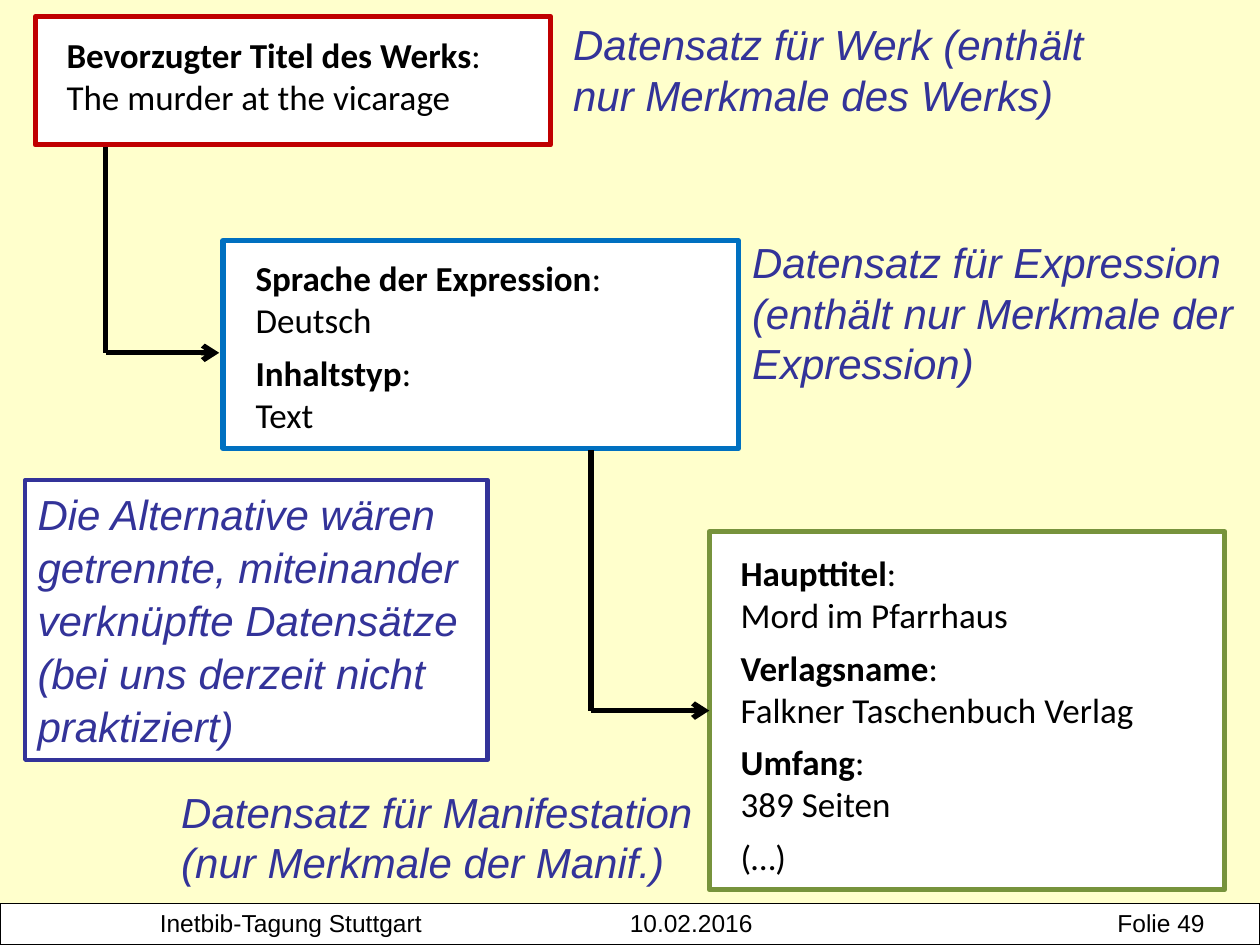
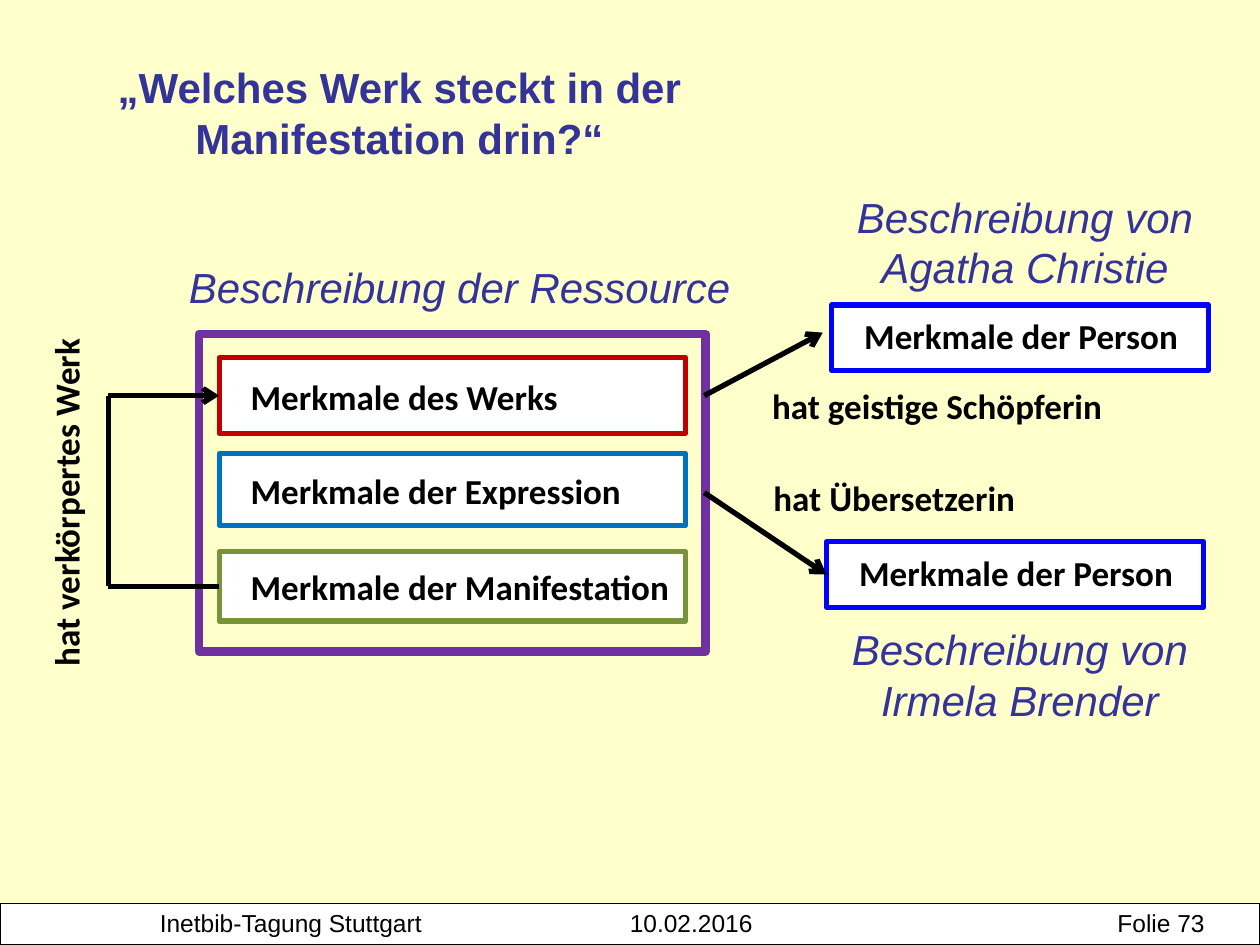
from dataclasses import dataclass
from typing import Any, NamedTuple, Optional

from lxml import etree
from pptx import Presentation
from pptx import slide as sld
from pptx import util as u
from pptx.dml import color as clr
from pptx.enum import shapes, text as txt
from pptx.oxml import ns
from pptx.shapes import autoshape as auto
from pptx.text import text as body


@dataclass(frozen=True)
class Theme:
    page: str = "FFFFCC"
    white: str = "FFFFFF"
    ink: str = "000000"
    navy: str = "333399"
    work: str = "C00000"
    expr: str = "0070C0"
    manif: str = "77933C"
    person: str = "0000FF"
    frame: str = "7030A0"
    head: str = "Arial"
    data: str = "Calibri"
    note_size: int = 24
    data_size: int = 20
    foot_size: int = 14
    thin: float = 0.75
    rule: float = 3
    thick: float = 5
    after: int = 6


T = Theme()


def rgb(hue: str) -> clr.RGBColor:
    return clr.RGBColor.from_string(hue)


def style(face: str, size: int, hue: str, **more: bool) -> dict[str, Any]:
    return {"name": face, "size": u.Pt(size), "hue": hue, **more}


NOTE = style(T.head, T.note_size, T.navy, italic=True)
TITLE = style(T.head, T.note_size, T.navy, bold=True)
DATA = style(T.data, T.data_size, T.ink)
LABEL = {**DATA, "bold": True}
FOOT = style(T.head, T.foot_size, T.ink)


class Area(NamedTuple):
    left: float
    top: float
    width: float
    height: float

    def emu(self) -> list[u.Length]:
        return [u.Inches(side) for side in self]

    def mid(self) -> float:
        return self.top + self.height / 2


class Point(NamedTuple):
    x: float
    y: float


class Run(NamedTuple):
    text: str
    form: dict[str, Any]


@dataclass
class Para:
    runs: list[Run]
    form: dict[str, Any]


@dataclass
class Card:
    """A framed box with text laid over it."""
    box: Area
    hue: str
    area: Area
    paras: list[Para]


def apply(target: Any, form: dict[str, Any]) -> None:
    for key, value in form.items():
        if key == "hue":
            target.color.rgb = rgb(value)
        else:
            setattr(target, key, value)


def note(text: str, form: dict[str, Any] = NOTE, **more: Any) -> list[Para]:
    return [Para([Run(text, form)], more)]


def label(text: str) -> list[Para]:
    return note(text, LABEL)


def fields(*pairs: tuple[str, str]) -> list[Para]:
    """Bold field names, each followed by its value on a new line."""
    paras = []
    for name, value in pairs:
        paras.append(Para([Run(name, LABEL), Run(":", DATA)], {}))
        paras += note(value, DATA, space_after=u.Pt(T.after))
    return paras


def fill(frame: body.TextFrame, paras: list[Para], fit: bool = True) -> None:
    size = txt.MSO_AUTO_SIZE
    apply(frame, {"word_wrap": True,
                  "vertical_anchor": txt.MSO_ANCHOR.TOP,
                  "auto_size": size.SHAPE_TO_FIT_TEXT if fit else size.NONE})
    for num, item in enumerate(paras):
        para = frame.add_paragraph() if num else frame.paragraphs[0]
        apply(para, {"alignment": txt.PP_ALIGN.LEFT, **item.form})
        for part in item.runs:
            for row, line in enumerate(part.text.split("\n")):
                if row:
                    para.add_line_break()
                run = para.add_run()
                run.text = line
                apply(run.font, part.form)


def write(slide: sld.Slide, area: Area, paras: list[Para], turn: float = 0) -> auto.Shape:
    shape = slide.shapes.add_textbox(*area.emu())
    shape.rotation = turn
    fill(shape.text_frame, paras)
    return shape


def frame(slide: sld.Slide, area: Area, hue: str, width: float = T.rule,
          solid: bool = True) -> auto.Shape:
    shape = slide.shapes.add_shape(shapes.MSO_SHAPE.RECTANGLE, *area.emu())
    shape.shadow.inherit = False
    if solid:
        shape.fill.solid()
        shape.fill.fore_color.rgb = rgb(T.white)
    else:
        shape.fill.background()
    apply(shape.line, {"hue": hue, "width": u.Pt(width)})
    return shape


def place(slide: sld.Slide, card: Card) -> auto.Shape:
    shape = frame(slide, card.box, card.hue)
    write(slide, card.area, card.paras)
    return shape


def link(slide: sld.Slide, start: Point, end: Point, arrow: bool = False,
         goal: Optional[auto.Shape] = None) -> None:
    """Draw a line; a goal shape is joined at the middle of its left side."""
    ends = [u.Inches(value) for value in (*start, *end)]
    line = slide.shapes.add_connector(shapes.MSO_CONNECTOR.STRAIGHT, *ends)
    apply(line.line, {"hue": T.ink, "width": u.Pt(T.rule)})
    if goal is not None:
        line.end_connect(goal, 1)
    if arrow:
        etree.SubElement(line.line._get_or_add_ln(), ns.qn("a:tailEnd"), type="arrow")
    etree.SubElement(line._element.spPr, ns.qn("a:effectLst"))


def footer(slide: sld.Slide, page: int) -> None:
    frame(slide, Area(0, 7.17, 10, 0.33), T.ink, T.thin)
    cells = ("Inetbib-Tagung Stuttgart", "10.02.2016", f"Folie {page}")
    shape = write(slide, Area(1.17, 7.16, 8.67, 0.34), note("\t".join(cells), FOOT))
    props = shape.text_frame.paragraphs[0]._p.get_or_add_pPr()
    tabs = etree.SubElement(props, ns.qn("a:tabLst"))
    for stop in (3.73, 7.6):
        etree.SubElement(tabs, ns.qn("a:tab"), pos=str(u.Inches(stop)), algn="l")


def records(slide: sld.Slide) -> None:
    """Separate linked records for work, expression and manifestation."""
    work = Card(Area(0.28, 0.13, 4.09, 1.02), T.work, Area(0.43, 0.22, 3.7, 0.77),
                fields(("Bevorzugter Titel des Werks", "The murder at the vicarage")))
    expr = Card(Area(1.77, 1.91, 4.09, 1.65), T.expr, Area(1.93, 1.99, 3.7, 1.53),
                fields(("Sprache der Expression", "Deutsch"), ("Inhaltstyp", "Text")))
    manif = Card(Area(5.63, 4.22, 4.09, 2.84), T.manif, Area(5.78, 4.33, 3.95, 3.05),
                 fields(("Haupttitel", "Mord im Pfarrhaus"),
                        ("Verlagsname", "Falkner Taschenbuch Verlag"),
                        ("Umfang", "389 Seiten")) + note("(…)", DATA))
    goal = [place(slide, card) for card in (work, expr, manif)][-1]

    bend = Point(0.84, 2.8)
    link(slide, Point(bend.x, 1.17), bend)
    link(slide, bend, Point(1.74, bend.y), arrow=True)
    bend = Point(4.69, manif.box.mid())
    link(slide, Point(bend.x, 3.57), bend)
    link(slide, bend, Point(manif.box.left, bend.y), arrow=True, goal=goal)

    for area, text in (
        (Area(4.45, 0.1, 4.69, 0.91), "Datensatz für Werk (enthält nur Merkmale des Werks)"),
        (Area(5.87, 1.83, 4.02, 1.31),
         "Datensatz für Expression\n(enthält nur Merkmale der Expression)"),
        (Area(1.34, 6.19, 4.33, 0.91),
         "Datensatz für Manifestation\n(nur Merkmale der Manif.)"),
    ):
        write(slide, area, note(text))
    other = frame(slide, Area(0.2, 3.81, 3.67, 2.22), T.navy, 2.5)
    fill(other.text_frame, note(
        "Die Alternative wären\ngetrennte, miteinander verknüpfte Datensätze "
        "(bei uns derzeit nicht praktiziert)", line_spacing=1.05))


def resource(slide: sld.Slide) -> None:
    """One combined description with links to persons."""
    title = slide.shapes.title
    spots = ("left", "top", "width", "height")
    apply(title, dict(zip(spots, Area(0.76, 0.44, 4.82, 1.31).emu())))
    center = {"alignment": txt.PP_ALIGN.CENTER}
    fill(title.text_frame, note("„Welches Werk steckt in der Manifestation drin?“",
                                TITLE, **center), fit=False)

    frame(slide, Area(1.58, 2.65, 4.02, 2.52), T.frame, T.thick, solid=False)
    write(slide, Area(1.4, 2.03, 4.82, 0.5), note("Beschreibung der Ressource"))
    levels = []
    for top, height, drop, hue, name in (
        (2.84, 0.6, 0.09, T.work, "des Werks"),
        (3.6, 0.57, 0.08, T.expr, "der Expression"),
        (4.38, 0.55, 0.06, T.manif, "der Manifestation"),
    ):
        card = Card(Area(1.74, top, 3.7, height), hue,
                    Area(1.89, top + drop, 3.95, 0.44), label(f"Merkmale {name}"))
        levels.append((card.box, place(slide, card)))

    people = []
    for left, top, rise, name in ((6.6, 2.42, -0.95, "Agatha Christie"),
                                  (6.56, 4.3, 0.6, "Irmela Brender")):
        card = Card(Area(left, top, 2.99, 0.52), T.person,
                    Area(left + 0.16, top + 0.03, 2.99, 0.44),
                    label("Merkmale der Person"))
        people.append(place(slide, card))
        write(slide, Area(left - 0.08, top + rise, 3.23, 0.91),
              note(f"Beschreibung von\n{name}", **center))
    link(slide, Point(5.59, 3.14), Point(6.53, 2.64), arrow=True)
    link(slide, Point(5.59, 3.91), Point(6.56, 4.56), arrow=True, goal=people[1])
    write(slide, Area(6.03, 3, 2.99, 0.44), label("hat geistige Schöpferin"))
    write(slide, Area(6.04, 3.73, 2.99, 0.44), label("hat Übersetzerin"))

    (first, work), _, (last, manif) = levels
    upper, lower = (Point(0.86, box.mid()) for box in (first, last))
    link(slide, lower, Point(last.left, lower.y), goal=manif)
    link(slide, lower, upper)
    link(slide, upper, Point(first.left, upper.y), arrow=True, goal=work)
    write(slide, Area(-0.96, 3.68, 2.97, 0.44), label("hat verkörpertes Werk"), turn=270)


def main() -> None:
    deck = Presentation()
    apply(deck, {"slide_width": u.Inches(10), "slide_height": u.Inches(7.5)})
    back = deck.slide_master.background.fill
    back.solid()
    back.fore_color.rgb = rgb(T.page)
    for layout, page, draw in (("Blank", 49, records), ("Title Only", 73, resource)):
        slide = deck.slides.add_slide(deck.slide_layouts.get_by_name(layout))
        footer(slide, page)
        draw(slide)
    deck.save("out.pptx")


if __name__ == "__main__":
    main()
